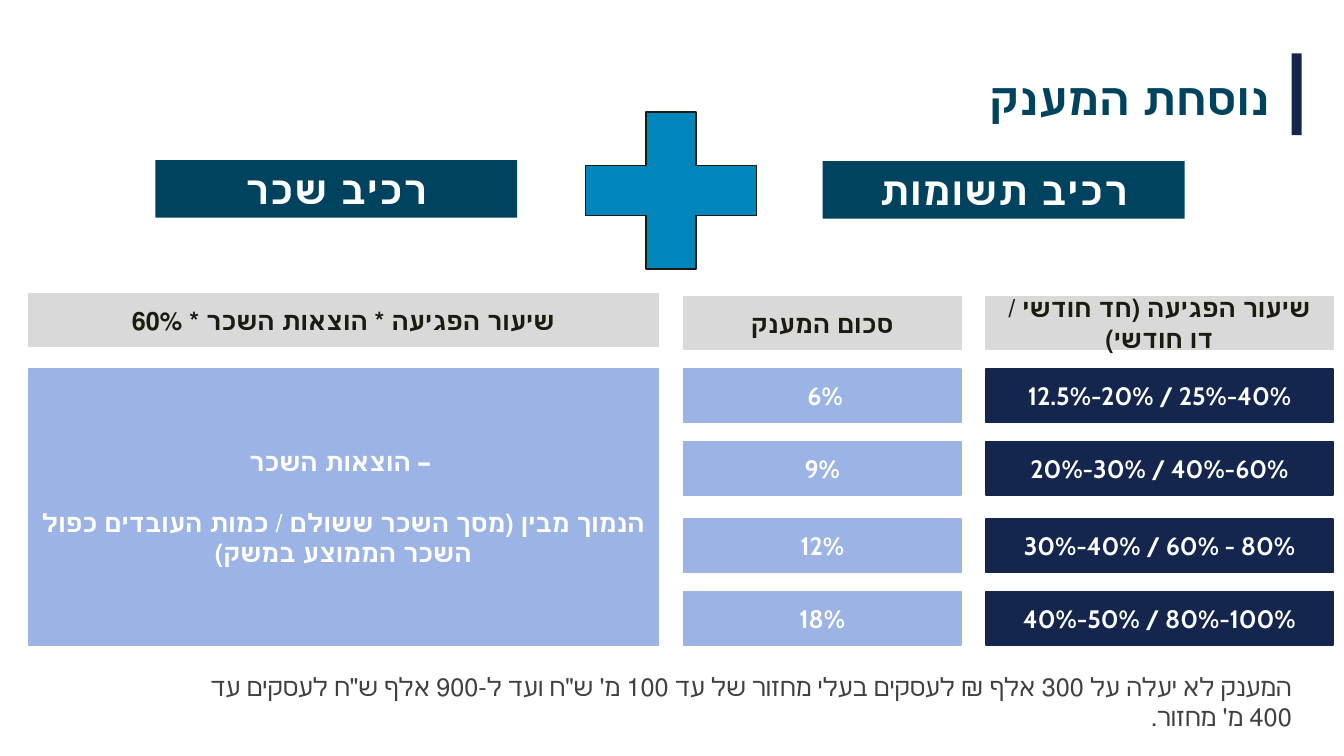
from dataclasses import dataclass

from pptx import Presentation
from pptx import util as u
from pptx.dml.color import RGBColor
from pptx.enum import shapes, text


@dataclass(frozen=True)
class Theme:
    font: str = "Cabin"
    teal: str = "00435E"
    navy: str = "14264E"
    pale: str = "9CB3E5"
    grey: str = "D9D9D9"
    blue: str = "0086BB"
    ink: str = "1D1B10"
    note: str = "404040"
    white: str = "FFFFFF"
    title: int = 32
    label: int = 28
    body: int = 18


THEME = Theme()

# Columns as (left, width); rows as tops
RATE, GRANT, WAGE = (9.78, 3.44), (6.78, 2.75), (0.28, 6.25)
ROW = 0.53
HEAD = 2.94
TOPS = (3.66, 4.38, 5.15, 5.87)
TIERS = (
    ("12.5%-20% / 25%-40%", " 6%"),
    ("20%-30% / 40%-60%", "9%"),
    ("30%-40% / 60% - 80%", "12%"),
    ("40%-50% / 80%-100%", "18%"),
)


def rgb(code):
    return RGBColor.from_string(code)


def style(para, size, color, bold=True, space=0):
    """Format every run; space is in hundredths of a point."""
    for run in para.runs:
        font = run.font
        font.size, font.bold, font.name = u.Pt(size), bold, THEME.font
        font.color.rgb = rgb(color)
        if space:
            run._r.get_or_add_rPr().set("spc", str(space))


def add_block(slide, box, fill, line=None, kind=shapes.MSO_SHAPE.RECTANGLE):
    block = slide.shapes.add_shape(kind, *map(u.Inches, box))
    block.shadow.inherit = False
    block.fill.solid()
    block.fill.fore_color.rgb = rgb(fill)
    if line:
        block.line.color.rgb = rgb(line)
        block.line.width = u.Pt(1)
    else:
        block.line.fill.background()
    return block


def add_cell(slide, col, top, words, fill, color=THEME.white, height=ROW):
    left, width = col
    frame = add_block(slide, (left, top, width, height), fill, fill).text_frame
    frame.text = words
    frame.vertical_anchor = text.MSO_ANCHOR.MIDDLE
    for para in frame.paragraphs:
        para.alignment = text.PP_ALIGN.CENTER
        style(para, THEME.body, color)
    return frame


def add_label(slide, left, top, words):
    frame = add_block(slide, (left, top, 3.59, 0.57), THEME.teal).text_frame
    frame.text = words
    frame.vertical_anchor = text.MSO_ANCHOR.TOP
    frame.auto_size = text.MSO_AUTO_SIZE.SHAPE_TO_FIT_TEXT
    para = frame.paragraphs[0]
    para.alignment = text.PP_ALIGN.CENTER
    style(para, THEME.label, THEME.white, space=80)


def add_text(slide, box, words, size, color, bold):
    frame = slide.shapes.add_textbox(*map(u.Inches, box)).text_frame
    frame.word_wrap = True
    frame.auto_size = text.MSO_AUTO_SIZE.SHAPE_TO_FIT_TEXT
    frame.text = words
    para = frame.paragraphs[0]
    para.alignment = text.PP_ALIGN.RIGHT
    para._p.get_or_add_pPr().set("rtl", "1")
    style(para, size, color, bold)


def main():
    deck = Presentation()
    deck.slide_width, deck.slide_height = u.Inches(13.33), u.Inches(7.5)
    slide = deck.slides.add_slide(deck.slide_layouts[6])

    # Title and its accent bar
    add_text(slide, (0.55, 0.65, 12.14, 0.64), "נוסחת המענק ",
             THEME.title, THEME.teal, True)
    add_block(slide, (12.81, 0.53, 0.1, 0.81), THEME.navy)

    # The two parts of the formula and the plus between them
    add_label(slide, 8.16, 1.6, "רכיב תשומות")
    add_label(slide, 1.54, 1.59, "רכיב שכר")
    add_block(slide, (5.5, 0.83, 2.31, 2.12), THEME.blue, THEME.ink,
              shapes.MSO_SHAPE.MATH_PLUS)

    # Column heads
    for col, top, words in (
        (RATE, HEAD, "שיעור הפגיעה (חד חודשי / דו חודשי)"),
        (GRANT, HEAD, "סכום המענק"),
        (WAGE, 2.91, "שיעור הפגיעה * הוצאות השכר * 60%"),
    ):
        add_cell(slide, col, top, words, THEME.grey, THEME.ink)

    # Grant tiers
    for top, (rate, grant) in zip(TOPS, TIERS):
        add_cell(slide, RATE, top, rate, THEME.navy)
        add_cell(slide, GRANT, top, grant, THEME.pale)

    # Wage panel, as tall as all tiers
    wage = add_cell(
        slide, WAGE, TOPS[0],
        "הוצאות השכר – \n"
        "הנמוך מבין (מסך השכר ששולם / כמות העובדים כפול השכר הממוצע במשק)",
        THEME.pale, height=TOPS[-1] + ROW - TOPS[0])
    wage.paragraphs[1].space_before = u.Pt(22)

    # Cap on the grant
    add_text(slide, (1.54, 6.61, 11.37, 0.71),
             "המענק לא יעלה על 300 אלף ₪ לעסקים בעלי מחזור של עד 100 מ' ש\"ח "
             "ועד ל-900 אלף ש\"ח לעסקים עד 400 מ' מחזור. ",
             THEME.body, THEME.note, False)

    deck.save("out.pptx")


if __name__ == "__main__":
    main()
